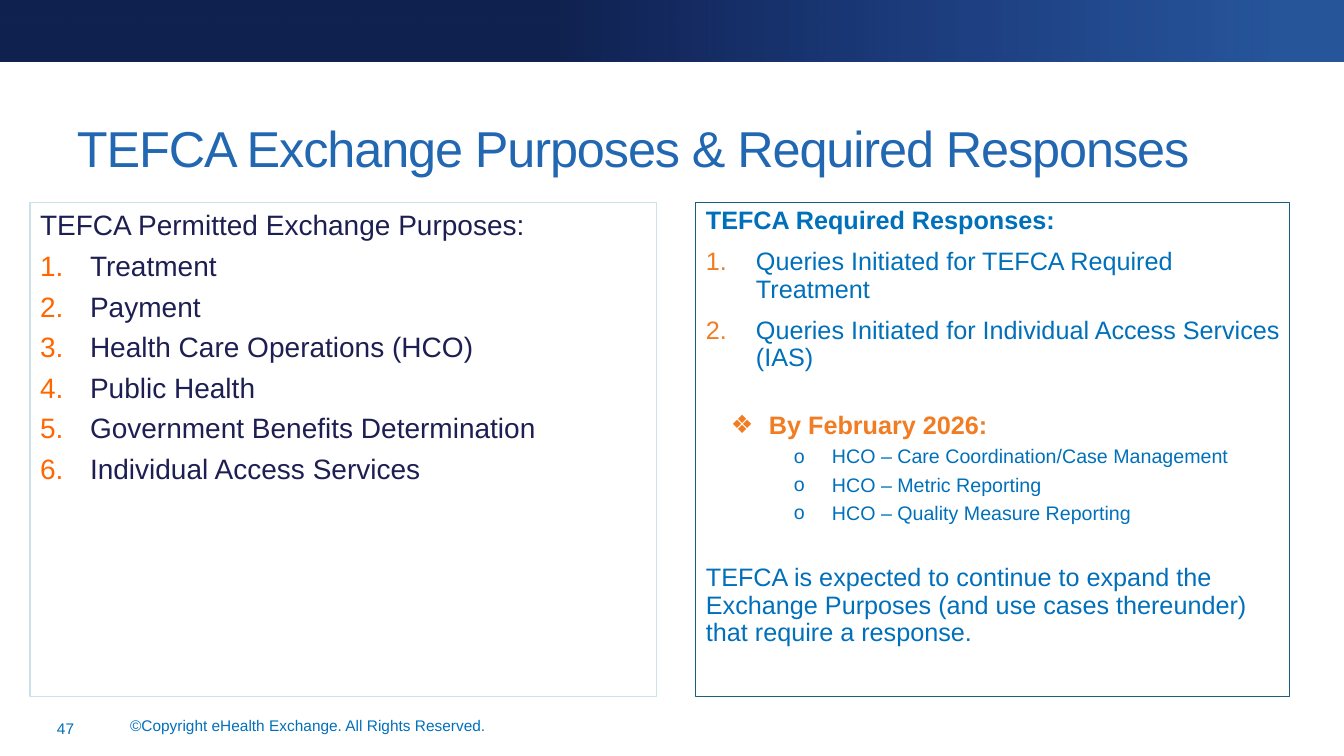
import dataclasses

import lxml.etree
import pptx
import pptx.dml.color
import pptx.enum.shapes
import pptx.enum.text
import pptx.oxml.ns
import pptx.util

PX = 914400 / 100.8
ANCHOR = pptx.enum.text.MSO_ANCHOR


@dataclasses.dataclass(frozen=True)
class Theme:
    """Colours, font and type sizes of the slide."""
    font: str = "Arial"
    band: str = "27559A"
    band_dark: str = "070E33"
    band_clear: str = "0C1059"
    title: str = "2267B1"
    navy: str = "1D1F52"
    blue: str = "0170BB"
    number: str = "FF6600"
    orange: str = "F17C21"
    pale_line: str = "CCE2E9"
    teal_line: str = "156082"
    title_size: int = 36
    list_size: int = 20
    body_size: int = 18
    detail_size: int = 14
    footer_size: int = 11


T = Theme()


def px(n):
    """Turn pixels into EMU."""
    return pptx.util.Emu(round(n * PX))


def rgb(color):
    """Return a colour object for a hex string."""
    return pptx.dml.color.RGBColor.from_string(color)


def sub(parent, tag, **attrs):
    """Append a DrawingML element to parent."""
    return lxml.etree.SubElement(parent, pptx.oxml.ns.qn("a:" + tag), **attrs)


def add_rect(s, box, fill=None, line=None):
    """Add a flat rectangle with an optional fill and outline."""
    sp = s.shapes.add_shape(pptx.enum.shapes.MSO_SHAPE.RECTANGLE, *map(px, box))
    sp.shadow.inherit = False
    if fill:
        sp.fill.solid()
        sp.fill.fore_color.rgb = rgb(fill)
    else:
        sp.fill.background()
    if line:
        sp.line.color.rgb = rgb(line)
        sp.line.width = pptx.util.Pt(0.75)
    else:
        sp.line.fill.background()
    return sp


def set_frame(sp, anchor=ANCHOR.TOP, top=5):
    """Wrap the text of a shape and set its insets and anchor."""
    tf = sp.text_frame
    tf.word_wrap = True
    tf.vertical_anchor = anchor
    tf.margin_left = tf.margin_right = px(10)
    tf.margin_top, tf.margin_bottom = px(top), px(5)
    return tf


def add_text(tf, text, size, color, bold=False, before=0, spacing=None,
             bullet=None, bullet_color=None, left=0, hang=0, track=0):
    """Add one formatted paragraph to a text frame."""
    p = tf.paragraphs[0] if not tf.text else tf.add_paragraph()
    p.alignment = pptx.enum.text.PP_ALIGN.LEFT
    if bullet:
        pr = p._p.get_or_add_pPr()
        pr.set("marL", str(px(left)))
        pr.set("indent", str(-px(hang)))
        sub(sub(pr, "buClr"), "srgbClr", val=bullet_color or color)
        sub(pr, "buFont", typeface=T.font)
        if bullet == "1.":
            sub(pr, "buAutoNum", type="arabicPeriod")
        else:
            sub(pr, "buChar", char=bullet)
    if before:
        p.space_before = pptx.util.Pt(before)
    if spacing:
        p.line_spacing = spacing
    r = p.add_run()
    r.text = text
    r.font.name, r.font.size, r.font.bold = T.font, pptx.util.Pt(size), bold
    r.font.color.rgb = rgb(color)
    if track:
        r._r.get_or_add_rPr().set("spc", str(track))


def add_label(s, box, text, size, color, anchor=ANCHOR.TOP, top=5, track=0):
    """Add a text box that holds one paragraph."""
    tf = set_frame(s.shapes.add_textbox(*map(px, box)), anchor, top)
    add_text(tf, text, size, color, track=track)


def add_band(s, box):
    """Draw the top band with a dark fade from the left."""
    x, y, w, h = box
    add_rect(s, box, T.band)
    fade = add_rect(s, (x, y, w - 73, h), T.band_dark)
    fade.fill.gradient()
    fade.fill.gradient_angle = 0
    stops = ((0.44, T.band_dark, 71000), (1, T.band_clear, 0))
    for stop, (position, color, alpha) in zip(fade.fill.gradient_stops, stops):
        stop.position = position
        stop.color.rgb = rgb(color)
        sub(stop._gs[0], "alpha", val=str(alpha))


def add_purposes(s, box):
    """Fill the left panel with the permitted purposes."""
    tf = set_frame(add_rect(s, box, line=T.pale_line))
    add_text(tf, "TEFCA Permitted Exchange Purposes:", T.list_size, T.navy)
    for purpose in ("Treatment", "Payment", "Health Care Operations (HCO)", "Public Health",
                    "Government Benefits Determination", "Individual Access Services"):
        add_text(tf, purpose, T.list_size, T.navy, before=5, bullet="1.",
                 bullet_color=T.number, left=50, hang=50)


def add_responses(s, box):
    """Fill the right panel with the required responses."""
    tf = set_frame(add_rect(s, box, line=T.teal_line))
    add_text(tf, "TEFCA Required Responses:", T.body_size, T.blue, bold=True, spacing=0.9)
    for query in ("Queries Initiated for TEFCA Required Treatment",
                  "Queries Initiated for Individual Access Services (IAS)"):
        add_text(tf, query, T.body_size, T.blue, before=10, spacing=0.9, bullet="1.",
                 bullet_color=T.orange, left=50, hang=50)
    add_text(tf, "By February 2026:", T.body_size, T.orange, bold=True, before=29,
             spacing=0.9, bullet="❖", left=63, hang=38)
    for use in ("Care Coordination/Case Management", "Metric Reporting",
                "Quality Measure Reporting"):
        add_text(tf, "HCO – " + use, T.detail_size, T.blue, before=5, spacing=0.9,
                 bullet="o", left=126, hang=38)
    add_text(tf, "TEFCA is expected to continue to expand the Exchange Purposes "
             "(and use cases thereunder) that require a response.",
             T.body_size, T.blue, before=29, spacing=0.9)


def add_footer(s, box):
    """Place the slide number and the copyright line."""
    x, y, w, h = box
    add_label(s, (x, y + 3, 84, 29), "47", T.footer_size, T.blue, ANCHOR.MIDDLE)
    add_label(s, (x + 73, y, w - 73, h), "©Copyright eHealth Exchange. All Rights Reserved.",
              T.footer_size, T.blue)


def main():
    """Build the slide and save it."""
    prs = pptx.Presentation()
    prs.slide_width, prs.slide_height = px(1344), px(756)
    s = prs.slides.add_slide(prs.slide_layouts[6])
    add_band(s, (0, 0, 1344, 62))
    add_label(s, (67, 107, 1210, 98), "TEFCA Exchange Purposes & Required Responses",
              T.title_size, T.title, top=10, track=-80)
    add_purposes(s, (30, 203, 627, 494))
    add_responses(s, (696, 203, 594, 494))
    add_footer(s, (47, 711, 683, 45))
    prs.save("out.pptx")


if __name__ == "__main__":
    main()
